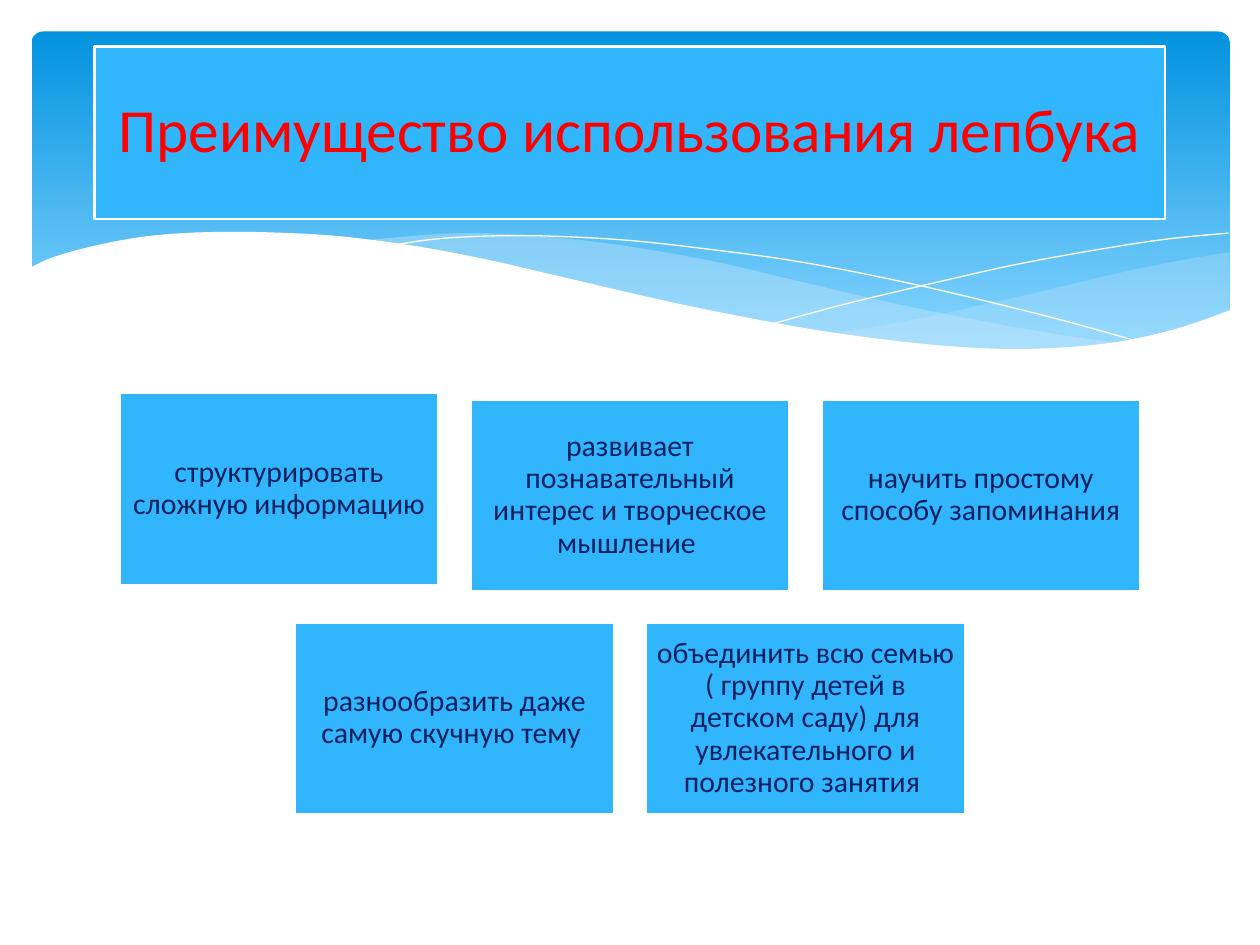
from dataclasses import dataclass

from lxml.etree import SubElement
from pptx import Presentation
from pptx.dml.color import RGBColor
from pptx.enum.shapes import MSO_SHAPE as Shape
from pptx.enum.text import MSO_ANCHOR as Anchor, PP_ALIGN as Align
from pptx.oxml.ns import qn
from pptx.util import Inches, Pt


@dataclass(frozen=True)
class Theme:
    font: str = "Calibri"
    box: str = "31B6FD"
    white: str = "FFFFFF"
    title: str = "FF0000"
    body: str = "002060"
    sky_top: str = "0293E0"
    sky_bottom: str = "83D3FE"
    wave: str = "C6E7FC"
    title_size: int = 35
    body_size: int = 17
    border: float = 1.25
    hairline: float = 0


THEME = Theme()

# Wave outlines: points that each curve passes through, in inches
RIGHT_WAVE_TOP = [(9.76, 2), (9.35, 2.07), (8.91, 2.16), (8.32, 2.3),
                  (7.79, 2.42), (7.29, 2.53), (6.61, 2.65)]
RIGHT_WAVE_BOTTOM = [(6.61, 2.65), (7.05, 2.71), (7.57, 2.76), (8.14, 2.78),
                     (8.63, 2.75), (9.05, 2.69), (9.42, 2.59), (9.76, 2.47)]
MIDDLE_WAVE_TOP = [(8.93, 2.73), (8.37, 2.65), (7.75, 2.54), (7.06, 2.4),
                   (6.29, 2.22), (5.69, 2.08), (5.14, 1.98), (4.65, 1.91),
                   (4.2, 1.87), (3.8, 1.85), (3.44, 1.86), (2.86, 1.91)]
MIDDLE_WAVE_BOTTOM = [(2.86, 1.91), (3.42, 1.99), (4.04, 2.11), (4.49, 2.22),
                      (5.3, 2.4), (6.01, 2.55), (6.65, 2.66), (7.22, 2.74),
                      (7.73, 2.77), (8.18, 2.78), (8.57, 2.77), (8.93, 2.73)]
FALLING_LINE = [(3.09, 1.95), (3.53, 1.89), (4.16, 1.87), (4.89, 1.9),
                (5.56, 1.97), (6.36, 2.08), (7.27, 2.26), (8.31, 2.51),
                (9.07, 2.72)]
RISING_LINE = [(6.13, 2.57), (6.72, 2.41), (7.48, 2.23), (8.06, 2.1),
               (8.66, 1.99), (9.24, 1.9), (9.75, 1.85)]
FRONT_WAVE_TOP = [(9.77, 2.46), (9.3, 2.62), (8.75, 2.73), (8.09, 2.77),
                  (7.44, 2.74), (6.68, 2.65), (6.03, 2.54), (5.29, 2.39),
                  (4.47, 2.2), (3.91, 2.07), (3.4, 1.97), (2.92, 1.9),
                  (2.5, 1.86), (1.93, 1.84), (1.46, 1.85), (1.06, 1.89),
                  (0.67, 1.97), (0.4, 2.05), (0.23, 2.13)]
FRONT_WAVE_BASE = [(0.23, 3.29), (9.77, 3.29)]

# Benefit cards
CARD_W, CARD_H = 2.53, 1.52
CARD_PITCH = 2.785
CARD_ROWS = [
    (3.17, ["структурировать сложную информацию",
            "развивает познавательный интерес и творческое мышление ",
            "научить простому способу запоминания"]),
    (4.94, ["разнообразить даже самую скучную тему ",
            "объединить всю семью ( группу детей в детском саду) "
            "для увлекательного и полезного занятия "]),
]
FIRST_CARD_LIFT = 0.05


def rgb(value):
    return RGBColor.from_string(value)


def smooth_curve(points, steps=5):
    """Catmull-Rom curve through the points."""
    padded = [points[0], *points, points[-1]]
    curve = [points[0]]
    for a, b, c, d in zip(padded, padded[1:], padded[2:], padded[3:]):
        for i in range(1, steps + 1):
            t = i / steps
            curve.append(tuple(
                (2 * q + (r - p) * t + (2 * p - 5 * q + 4 * r - s) * t ** 2
                 + (3 * q - p - 3 * r + s) * t ** 3) / 2
                for p, q, r, s in zip(a, b, c, d)))
    return curve


def add_outline(slide, points, close):
    start, *rest = [(Inches(x), Inches(y)) for x, y in points]
    builder = slide.shapes.build_freeform(*start)
    builder.add_line_segments(rest, close=close)
    sp = builder.convert_to_shape()
    sp.shadow.inherit = False
    return sp


def add_wave(slide, points, color, opacity=100):
    sp = add_outline(slide, points, close=True)
    sp.fill.solid()
    sp.fill.fore_color.rgb = rgb(color)
    sp.line.fill.background()
    if opacity < 100:
        clr = sp.fill._xPr.find(qn("a:solidFill"))[0]
        SubElement(clr, qn("a:alpha")).set("val", str(opacity * 1000))


def add_wave_line(slide, points):
    sp = add_outline(slide, smooth_curve(points), close=False)
    sp.fill.background()
    sp.line.color.rgb = rgb(THEME.white)
    sp.line.width = Pt(THEME.hairline)


def add_sky(slide):
    sp = slide.shapes.add_shape(Shape.ROUNDED_RECTANGLE, Inches(0.25),
                                Inches(0.25), Inches(9.51), Inches(2.7))
    sp.adjustments[0] = 0.034
    sp.shadow.inherit = False
    sp.line.fill.background()
    sp.fill.gradient()
    sp.fill.gradient_angle = 270
    stops = [(0, THEME.sky_top), (0.9, THEME.sky_bottom)]
    for stop, (position, color) in zip(sp.fill.gradient_stops, stops):
        stop.position = position
        stop.color.rgb = rgb(color)


def add_box(slide, left, top, width, height, text, size, color, inset):
    sp = slide.shapes.add_shape(Shape.RECTANGLE, Inches(left), Inches(top),
                                Inches(width), Inches(height))
    sp.shadow.inherit = False
    sp.fill.solid()
    sp.fill.fore_color.rgb = rgb(THEME.box)
    sp.line.color.rgb = rgb(THEME.white)
    sp.line.width = Pt(THEME.border)
    tf = sp.text_frame
    tf.word_wrap = True
    tf.vertical_anchor = Anchor.MIDDLE
    tf.margin_left = tf.margin_right = Inches(inset)
    tf.margin_top = tf.margin_bottom = Inches(inset)
    tf.text = text
    p = tf.paragraphs[0]
    p.alignment = Align.CENTER
    p.line_spacing = 0.9
    r = p.runs[0]
    r.font.name = THEME.font
    r.font.size = Pt(size)
    r.font.color.rgb = rgb(color)


def add_cards(slide):
    for row, (top, texts) in enumerate(CARD_ROWS):
        row_width = CARD_PITCH * (len(texts) - 1) + CARD_W
        left = (10 - row_width) / 2
        for col, text in enumerate(texts):
            lift = FIRST_CARD_LIFT if row == col == 0 else 0
            add_box(slide, left + col * CARD_PITCH, top - lift, CARD_W, CARD_H,
                    text, THEME.body_size, THEME.body, 0.07)


def main():
    prs = Presentation()
    prs.slide_width, prs.slide_height = Inches(10), Inches(7.5)
    slide = prs.slides.add_slide(prs.slide_layouts[6])

    # Sky band with waves
    add_sky(slide)
    add_wave(slide, smooth_curve(RIGHT_WAVE_TOP)
             + smooth_curve(RIGHT_WAVE_BOTTOM), THEME.wave, 29)
    add_wave(slide, smooth_curve(MIDDLE_WAVE_TOP)
             + smooth_curve(MIDDLE_WAVE_BOTTOM), THEME.wave, 40)
    add_wave_line(slide, FALLING_LINE)
    add_wave_line(slide, RISING_LINE)
    add_wave(slide, smooth_curve(FRONT_WAVE_TOP) + FRONT_WAVE_BASE, THEME.white)

    # Benefits and title
    add_cards(slide)
    add_box(slide, 0.75, 0.37, 8.5, 1.37, "Преимущество использования лепбука ",
            THEME.title_size, THEME.title, 0.15)

    prs.save("out.pptx")


if __name__ == "__main__":
    main()
